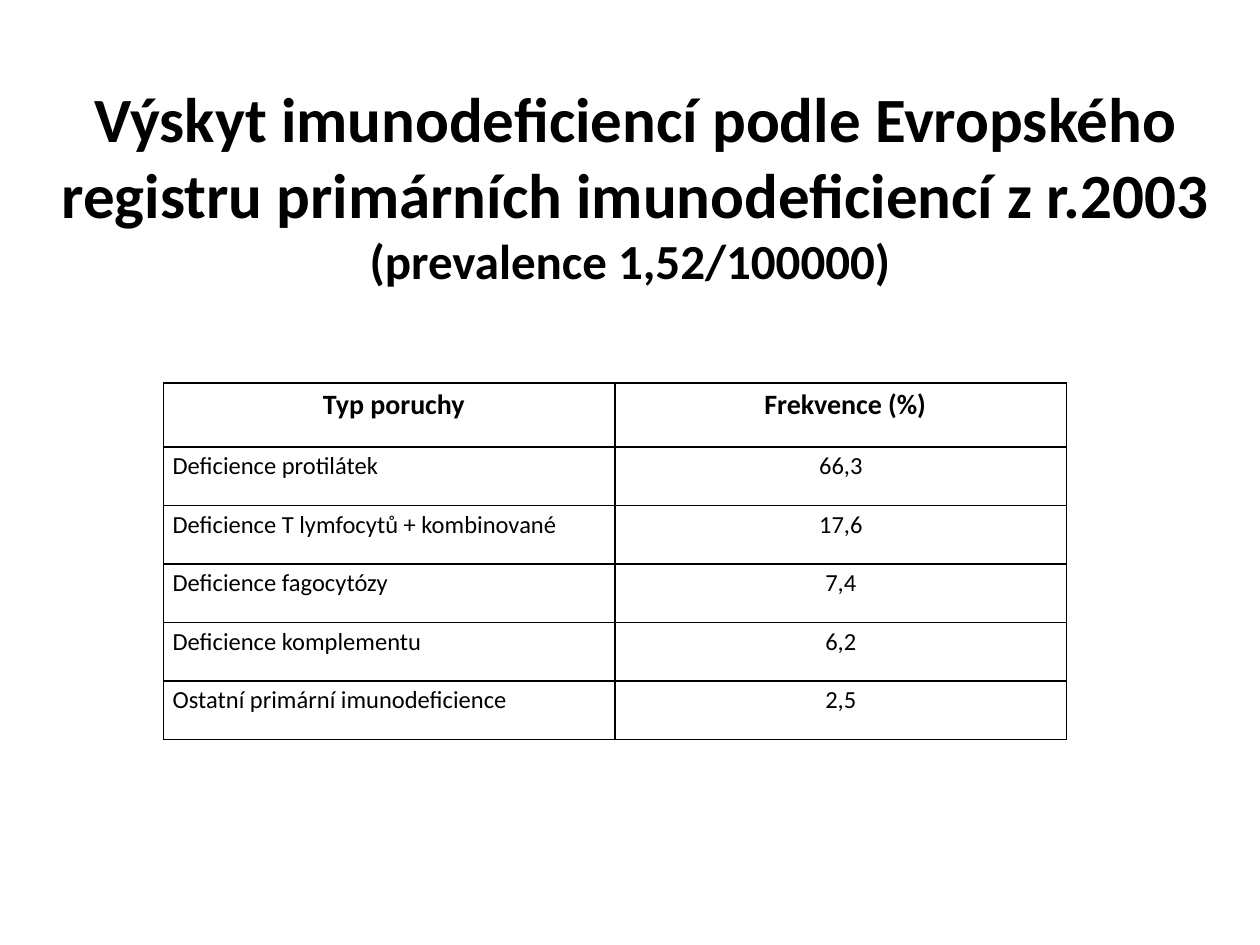
from dataclasses import dataclass

from lxml import etree
from pptx import Presentation
from pptx.dml.color import RGBColor
from pptx.enum.text import MSO_ANCHOR, MSO_AUTO_SIZE, PP_ALIGN
from pptx.oxml.ns import qn
from pptx.util import Cm, Pt

LEFT, CENTER = PP_ALIGN.LEFT, PP_ALIGN.CENTER
MIDDLE = MSO_ANCHOR.MIDDLE
NO_AUTOFIT = MSO_AUTO_SIZE.NONE

FONT = "Calibri"
BLACK = "000000"
TITLE_ONLY_LAYOUT = 5
BORDER_WIDTH = Pt(1)
COLUMN_WIDTH = Cm(9.1)


@dataclass(frozen=True)
class RowStyle:
    size: float
    bold: bool
    height: Cm
    margin: Cm
    indent: Cm
    label_align: PP_ALIGN


@dataclass(frozen=True)
class Frequency:
    disorder: str
    percent: str


HEADER_STYLE = RowStyle(16, True, Cm(1.29), Cm(0.13), Cm(0.18), CENTER)
BODY_STYLE = RowStyle(14, False, Cm(1.18), Cm(0.18), Cm(0), LEFT)

HEADER = Frequency("Typ poruchy", "Frekvence (%)")
FREQUENCIES = [
    Frequency("Deficience protilátek", "66,3"),
    Frequency("Deficience T lymfocytů + kombinované", "17,6"),
    Frequency("Deficience fagocytózy", "7,4"),
    Frequency("Deficience komplementu", "6,2"),
    Frequency("Ostatní primární imunodeficience", "2,5"),
]


def format_run(run, size: float, bold: bool, color: str = BLACK) -> None:
    run.font.name = FONT
    run.font.size = Pt(size)
    run.font.bold = bold
    run.font.color.rgb = RGBColor.from_string(color)


def add_borders(cell, color: str = BLACK) -> None:
    properties = cell._tc.get_or_add_tcPr()
    for position, side in enumerate(("a:lnL", "a:lnR", "a:lnT", "a:lnB")):
        line = etree.Element(qn(side), w=str(BORDER_WIDTH))
        fill = etree.SubElement(line, qn("a:solidFill"))
        etree.SubElement(fill, qn("a:srgbClr"), val=color)
        properties.insert(position, line)


def fill_cell(cell, text: str, align: PP_ALIGN, style: RowStyle) -> None:
    cell.fill.background()
    add_borders(cell)
    cell.margin_left = cell.margin_right = style.margin
    cell.margin_top = cell.margin_bottom = 0
    paragraph = cell.text_frame.paragraphs[0]
    paragraph.text = text
    paragraph.alignment = align
    paragraph.line_spacing = 1.15
    paragraph.space_after = Pt(10)
    paragraph._p.get_or_add_pPr().set("marL", str(style.indent))
    format_run(paragraph.runs[0], style.size, style.bold)


def add_title(slide) -> None:
    title = slide.shapes.title
    title.left, title.top = Cm(0.71), Cm(2.13)
    title.width, title.height = Cm(24.2), Cm(3.18)
    frame = title.text_frame
    frame.auto_size = NO_AUTOFIT
    frame.word_wrap = True
    frame.vertical_anchor = MIDDLE
    heading = frame.paragraphs[0]
    heading.alignment = CENTER
    for text, size in (
        ("Výskyt imunodeficiencí podle Evropského registru "
         "primárních imunodeficiencí z r.2003 ", 36),
        ("(prevalence 1,52/100000) ", 28),
    ):
        run = heading.add_run()
        run.text = text
        format_run(run, size, True)


def add_frequency_table(slide) -> None:
    rows = [(HEADER, HEADER_STYLE)] + [(item, BODY_STYLE) for item in FREQUENCIES]
    height = sum(style.height for _, style in rows)
    table = slide.shapes.add_table(
        len(rows), 2, Cm(3.3), Cm(7.72), 2 * COLUMN_WIDTH, height
    ).table
    table.first_row = table.horz_banding = False
    for column in table.columns:
        column.width = COLUMN_WIDTH
    for index, (item, style) in enumerate(rows):
        table.rows[index].height = style.height
        fill_cell(table.cell(index, 0), item.disorder, style.label_align, style)
        fill_cell(table.cell(index, 1), item.percent, CENTER, style)


def main() -> None:
    presentation = Presentation()
    presentation.slide_width, presentation.slide_height = Cm(25.4), Cm(19.05)
    slide = presentation.slides.add_slide(
        presentation.slide_layouts[TITLE_ONLY_LAYOUT]
    )
    add_title(slide)
    add_frequency_table(slide)
    presentation.save("out.pptx")


if __name__ == "__main__":
    main()
